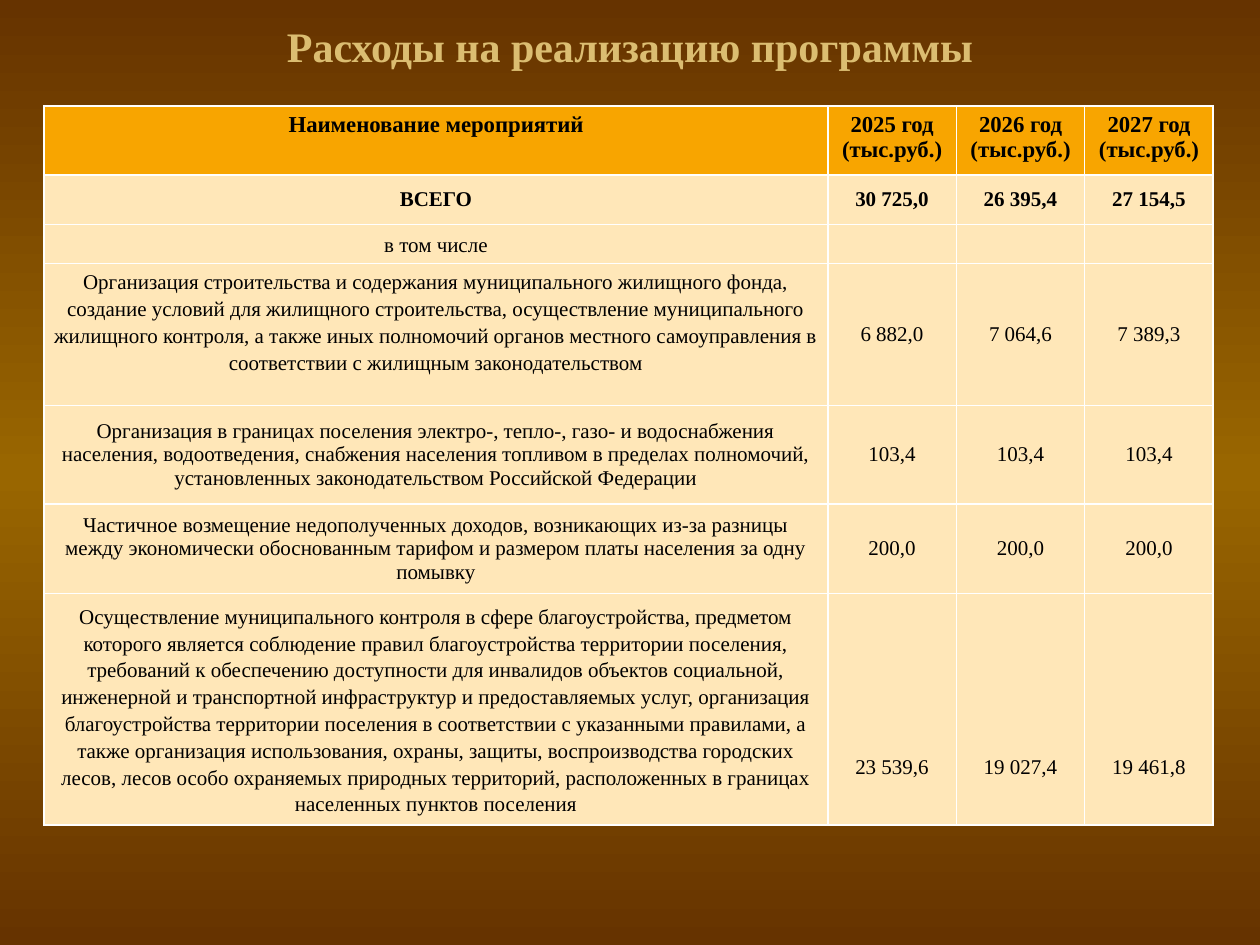
from dataclasses import dataclass

from lxml import etree
from pptx import Presentation
from pptx.dml.color import RGBColor
from pptx.enum.text import MSO_ANCHOR as Anchor, PP_ALIGN as Align
from pptx.oxml import parse_xml
from pptx.oxml.ns import nsdecls, qn
from pptx.util import Inches, Pt

COLORS = {
    "edge": "663300", "middle": "996600", "title": "DBBD71", "text": "000000",
    "header": "F8A500", "body": "FFE7B8", "border": "FFFFFF",
}
FONT = "Times New Roman"
COLUMN_WIDTHS = [6.22, 1.02, 1.02, 1.02]


@dataclass
class CellStyle:
    """Look of one table cell; insets are left, top, right, bottom in inches."""
    fill: str = "body"
    size: int = 12
    bold: bool = False
    anchor: Anchor = Anchor.MIDDLE
    insets: tuple = (0.1, 0.05, 0.1, 0.05)
    spacing: float = 1.0


@dataclass
class ExpenseRow:
    height: float
    texts: list[str]
    name_style: CellStyle
    value_style: CellStyle


HEADER = CellStyle(fill="header", size=13, bold=True, anchor=Anchor.TOP)
TOTAL = CellStyle(bold=True)
PLAIN = CellStyle()
TIGHT = CellStyle(insets=(0.07, 0, 0.07, 0), spacing=1.15)
RAISED = CellStyle(insets=(0.07, 0, 0.07, 0.21), spacing=1.15)
LOWERED = CellStyle(insets=(0.1, 0.98, 0.1, 0.05))

ROWS = [
    ExpenseRow(0.55, ["Наименование мероприятий"]
               + [f"{year} год\n(тыс.руб.)" for year in (2025, 2026, 2027)], HEADER, HEADER),
    ExpenseRow(0.39, ["ВСЕГО", "30 725,0", "26 395,4", "27 154,5"], TOTAL, TOTAL),
    ExpenseRow(0.31, ["в том числе", "", "", ""], TIGHT, TIGHT),
    ExpenseRow(1.08, [
        "Организация строительства и содержания муниципального жилищного фонда, "
        "создание условий для жилищного строительства, осуществление муниципального "
        "жилищного контроля, а также иных полномочий органов местного самоуправления "
        "в соответствии с жилищным законодательством",
        "6 882,0", "7 064,6", "7 389,3"], RAISED, PLAIN),
    ExpenseRow(0.78, [
        "Организация в границах поселения электро-, тепло-, газо- и водоснабжения "
        "населения, водоотведения, снабжения населения топливом в пределах полномочий, "
        "установленных законодательством Российской Федерации",
        "103,4", "103,4", "103,4"], PLAIN, PLAIN),
    ExpenseRow(0.71, [
        "Частичное возмещение недополученных доходов, возникающих из-за разницы между "
        "экономически обоснованным тарифом и размером платы населения за одну помывку",
        "200,0", "200,0", "200,0"], PLAIN, PLAIN),
    ExpenseRow(1.71, [
        "Осуществление муниципального контроля в сфере благоустройства, предметом "
        "которого является соблюдение правил благоустройства территории поселения, "
        "требований к обеспечению доступности для инвалидов объектов социальной, "
        "инженерной и транспортной инфраструктур и предоставляемых услуг, организация "
        "благоустройства территории поселения в соответствии с указанными правилами, "
        "а также организация использования, охраны, защиты, воспроизводства городских "
        "лесов, лесов особо охраняемых природных территорий, расположенных в границах "
        "населенных пунктов поселения",
        "23 539,6", "19 027,4", "19 461,8"], TIGHT, LOWERED),
]


def color(name: str) -> RGBColor:
    return RGBColor.from_string(COLORS[name])


def paint_background(slide) -> None:
    stops = "".join(
        f'<a:gs pos="{position}"><a:srgbClr val="{COLORS[name]}"/></a:gs>'
        for position, name in ((0, "edge"), (50000, "middle"), (100000, "edge")))
    slide.background.fill.solid()
    properties = slide.background.fill._xPr
    gradient = parse_xml(f'<a:gradFill {nsdecls("a")} rotWithShape="1"><a:gsLst>{stops}</a:gsLst>'
                         '<a:lin ang="5400000" scaled="1"/></a:gradFill>')
    properties.replace(properties.find(qn("a:solidFill")), gradient)


def write_text(frame, text: str, size: int, bold: bool, tint: str, spacing: float = 1.0) -> None:
    frame.word_wrap = True
    for index, line in enumerate(text.split("\n")):
        para = frame.add_paragraph() if index else frame.paragraphs[0]
        para.alignment = Align.CENTER
        para.line_spacing = spacing
        if line:
            span = para.add_run()
            span.text = line
            span.font.name = FONT
            span.font.size = Pt(size)
            span.font.bold = bold
            span.font.color.rgb = color(tint)


def add_borders(cell) -> None:
    properties = cell._tc.get_or_add_tcPr()
    for index, side in enumerate(("lnL", "lnR", "lnT", "lnB")):
        line = etree.Element(qn(f"a:{side}"), w=str(Pt(1)))
        fill = etree.SubElement(line, qn("a:solidFill"))
        etree.SubElement(fill, qn("a:srgbClr"), val=COLORS["border"])
        properties.insert(index, line)


def fill_cell(cell, text: str, style: CellStyle) -> None:
    cell.fill.solid()
    cell.fill.fore_color.rgb = color(style.fill)
    cell.vertical_anchor = style.anchor
    (cell.margin_left, cell.margin_top,
     cell.margin_right, cell.margin_bottom) = map(Inches, style.insets)
    write_text(cell.text_frame, text, style.size, style.bold, "text", style.spacing)
    add_borders(cell)


def add_title(slide, text: str) -> None:
    box = slide.shapes.add_textbox(Inches(0.5), Inches(0.21), Inches(9), Inches(0.31))
    frame = box.text_frame
    frame.vertical_anchor = Anchor.MIDDLE
    frame.margin_top = frame.margin_bottom = 0
    write_text(frame, text, 24, True, "title")


def add_expense_table(slide, rows: list[ExpenseRow]) -> None:
    table = slide.shapes.add_table(
        len(rows), len(COLUMN_WIDTHS), Inches(0.35), Inches(0.84),
        Inches(sum(COLUMN_WIDTHS)), Inches(sum(row.height for row in rows))).table
    table.horz_banding = False
    for column, width in zip(table.columns, COLUMN_WIDTHS):
        column.width = Inches(width)
    for table_row, row in zip(table.rows, rows):
        table_row.height = Inches(row.height)
        for index, (cell, text) in enumerate(zip(table_row.cells, row.texts)):
            fill_cell(cell, text, row.value_style if index else row.name_style)


def main() -> None:
    deck = Presentation()
    deck.slide_width, deck.slide_height = Inches(10), Inches(7.5)
    page = deck.slides.add_slide(deck.slide_layouts[6])
    paint_background(page)
    add_title(page, "Расходы на реализацию программы")
    add_expense_table(page, ROWS)
    deck.save("out.pptx")


if __name__ == "__main__":
    main()
